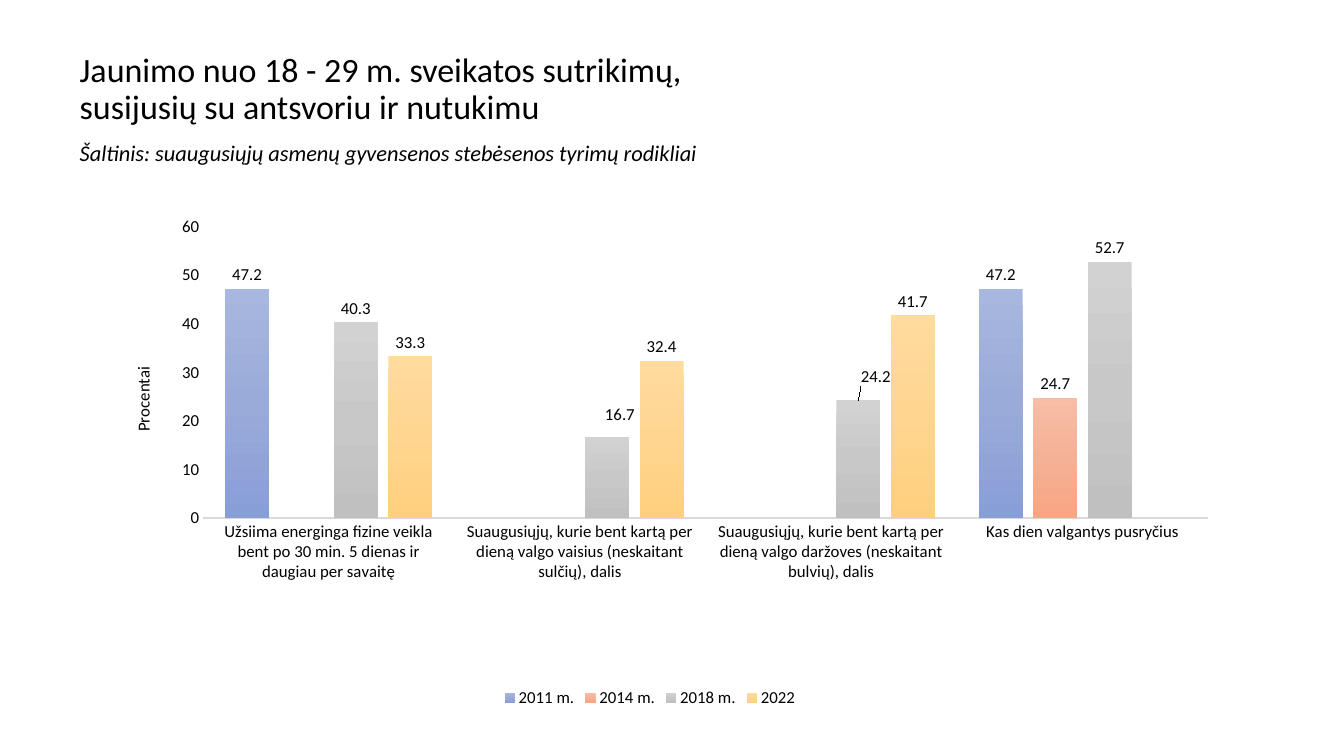
"""Build a slide with a clustered column chart of young people's health habits."""
from copy import deepcopy

from lxml import etree
from pptx import Presentation
from pptx.chart.data import CategoryChartData
from pptx.dml.color import RGBColor
from pptx.enum.chart import XL_CHART_TYPE, XL_LABEL_POSITION, XL_LEGEND_POSITION, XL_TICK_MARK
from pptx.enum.text import MSO_ANCHOR, MSO_AUTO_SIZE, PP_ALIGN
from pptx.oxml.ns import qn
from pptx.util import Inches, Pt

COLUMNS = XL_CHART_TYPE.COLUMN_CLUSTERED
OUTSIDE_END = XL_LABEL_POSITION.OUTSIDE_END
LEGEND_BOTTOM = XL_LEGEND_POSITION.BOTTOM
NO_TICK = XL_TICK_MARK.NONE
MIDDLE, TOP = MSO_ANCHOR.MIDDLE, MSO_ANCHOR.TOP
NO_AUTOSIZE = MSO_AUTO_SIZE.NONE
LEFT = PP_ALIGN.LEFT

COLORS = {"text": "000000", "axis": "D9D9D9"}
CATEGORIES = [
    "Užsiima energinga fizine veikla bent po 30 min. 5 dienas ir daugiau per savaitę",
    "Suaugusiųjų, kurie bent kartą per dieną valgo vaisius (neskaitant sulčių), dalis",
    "Suaugusiųjų, kurie bent kartą per dieną valgo daržoves (neskaitant bulvių), dalis",
    "Kas dien valgantys pusryčius",
]
SERIES = [
    ("2011 m.", (47.2, None, None, 47.2), ("A8B7DF", "9AABD9", "889ED7")),
    ("2014 m.", (None, None, None, 24.7), ("F7BDA5", "F5B196", "F8A582")),
    ("2018 m.", (40.3, 16.7, 24.2, 52.7), ("D2D2D2", "C8C8C8", "C0C0C0")),
    ("2022", (33.3, 32.4, 41.7, None), ("FFDB9E", "FFD590", "FFD07C")),
]
MOVED_LABELS = {("2018 m.", 1): (1.1, -1.5), ("2018 m.", 2): (1.5, -1.9)}


class SlideBuilder:
    """Hold the style and the current slide, placing elements on a 100 by 100 grid."""

    font_name = "Calibri"
    label_size = 12

    def __init__(self, presentation):
        self.column = presentation.slide_width / 100
        self.row = presentation.slide_height / 100
        self.slide = presentation.slides.add_slide(presentation.slide_layouts[1])

    def box(self, left, top, width, height):
        """Turn grid units into slide lengths."""
        return (int(left * self.column), int(top * self.row),
                int(width * self.column), int(height * self.row))

    def style_font(self, font, size, italic=False):
        """Apply the common font."""
        font.name = self.font_name
        font.size = Pt(size)
        font.bold = False
        font.italic = italic
        font.color.rgb = RGBColor.from_string(COLORS["text"])

    def fill_placeholder(self, index, text, area, size, anchor, italic=False):
        """Move a template placeholder and write one unbulleted paragraph in it."""
        shape = self.slide.placeholders[index]
        shape.left, shape.top, shape.width, shape.height = self.box(*area)
        frame = shape.text_frame
        frame.text = text
        frame.word_wrap = True
        frame.auto_size = NO_AUTOSIZE
        frame.vertical_anchor = anchor
        paragraph = frame.paragraphs[0]
        properties = paragraph._p.get_or_add_pPr()
        properties.set("marL", "0")
        properties.set("indent", "0")
        etree.SubElement(properties, qn("a:buNone"))
        paragraph.alignment = LEFT
        paragraph.line_spacing = 0.9
        paragraph.space_before = Pt(0)
        self.style_font(paragraph.font, size, italic)

    def manual_layout(self, **settings):
        """Make a chart layout element from its settings."""
        layout = etree.Element(qn("c:layout"))
        manual = etree.SubElement(layout, qn("c:manualLayout"))
        for name, value in settings.items():
            etree.SubElement(manual, qn(f"c:{name}")).set("val", str(value))
        return layout

    def add_column_chart(self, area, plot_area):
        """Add the chart with its plot area given in percent of the chart."""
        data = CategoryChartData()
        data.categories = CATEGORIES
        for name, values, _ in SERIES:
            data.add_series(name, values)
        chart = self.slide.shapes.add_chart(COLUMNS, *self.box(*area), data).chart
        chart.has_title = False
        self.style_font(chart.font, self.label_size)
        chart.has_legend = True
        chart.legend.position = LEGEND_BOTTOM
        chart.legend.include_in_layout = False
        self.style_font(chart.legend.font, self.label_size)
        plot = chart.plots[0]
        plot.gap_width = 100
        plot.overlap = -24
        plot.vary_by_categories = False
        self.style_axes(chart)
        for series, (_, _, shades) in zip(plot.series, SERIES):
            self.style_series(series, shades)

        element = chart._chartSpace.find(".//" + qn("c:plotArea"))
        for layout in element.findall(qn("c:layout")):
            element.remove(layout)
        x, y, w, h = (share / 100 for share in plot_area)
        element.insert(0, self.manual_layout(
            layoutTarget="inner", xMode="edge", yMode="edge", x=x, y=y, w=w, h=h))

    def style_axes(self, chart):
        """Format both axes and the value axis title."""
        for axis in (chart.category_axis, chart.value_axis):
            axis.major_tick_mark = axis.minor_tick_mark = NO_TICK
            axis.has_major_gridlines = False
            self.style_font(axis.tick_labels.font, self.label_size)
        line = chart.category_axis.format.line
        line.color.rgb = RGBColor.from_string(COLORS["axis"])
        line.width = Pt(0.75)
        axis = chart.value_axis
        axis.format.line.fill.background()
        axis.minimum_scale, axis.maximum_scale, axis.major_unit = 0, 60, 10
        frame = axis.axis_title.text_frame
        frame.text = "Procentai"
        self.style_font(frame.paragraphs[0].font, self.label_size)

    def style_series(self, series, shades):
        """Give a series its vertical gradient and value labels."""
        fill = series.format.fill
        fill.gradient()
        fill.gradient_angle = 270
        stops = series._element.find(".//" + qn("a:gsLst"))
        stops.insert(1, deepcopy(stops[0]))
        for position, (stop, shade) in enumerate(zip(fill.gradient_stops, shades)):
            stop.position = position / 2
            stop.color.rgb = RGBColor.from_string(shade)
        labels = series.data_labels
        labels.show_value = True
        labels.position = OUTSIDE_END
        self.style_font(labels.font, self.label_size)
        for (name, index), (x, y) in MOVED_LABELS.items():
            if name == series.name:
                label = series.points[index].data_label
                label.position = OUTSIDE_END
                self.style_font(label.font, self.label_size)
                element = series._element.findall(".//" + qn("c:dLbl"))[-1]
                element.insert(1, self.manual_layout(x=x / 100, y=y / 100))


def main():
    """Build and save the slide."""
    presentation = Presentation()
    presentation.slide_width, presentation.slide_height = Inches(13.33), Inches(7.5)
    builder = SlideBuilder(presentation)
    builder.fill_placeholder(
        0, "Jaunimo nuo 18 - 29 m. sveikatos sutrikimų, susijusių su antsvoriu ir nutukimu",
        (5.18, 5.87, 54.91, 12.13), 24.3, MIDDLE)
    builder.add_column_chart((5.18, 24, 86.35, 70.13), (11.5, 8.5, 86.6, 55))
    builder.fill_placeholder(
        1, "Šaltinis: suaugusiųjų asmenų gyvensenos stebėsenos tyrimų rodikliai",
        (5.18, 18.13, 89.72, 4.53), 16, TOP, italic=True)
    presentation.save("out.pptx")


if __name__ == "__main__":
    main()
